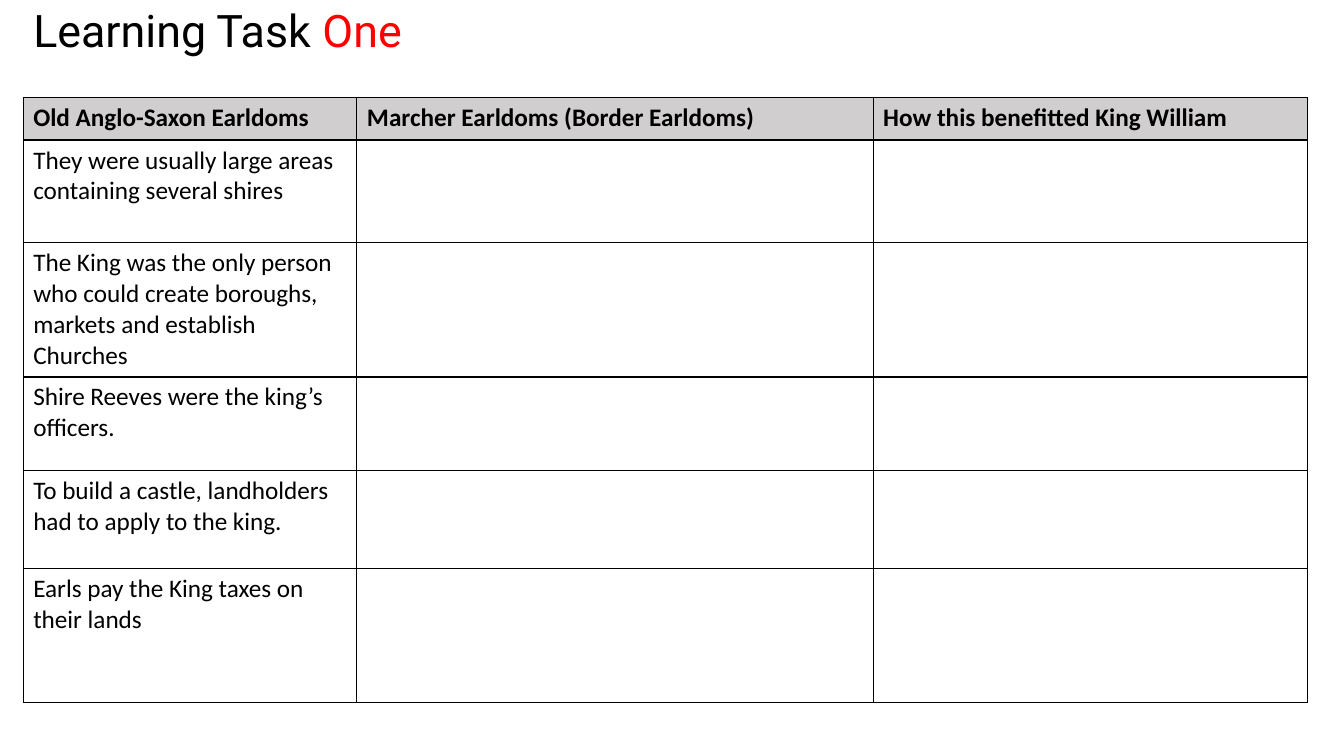
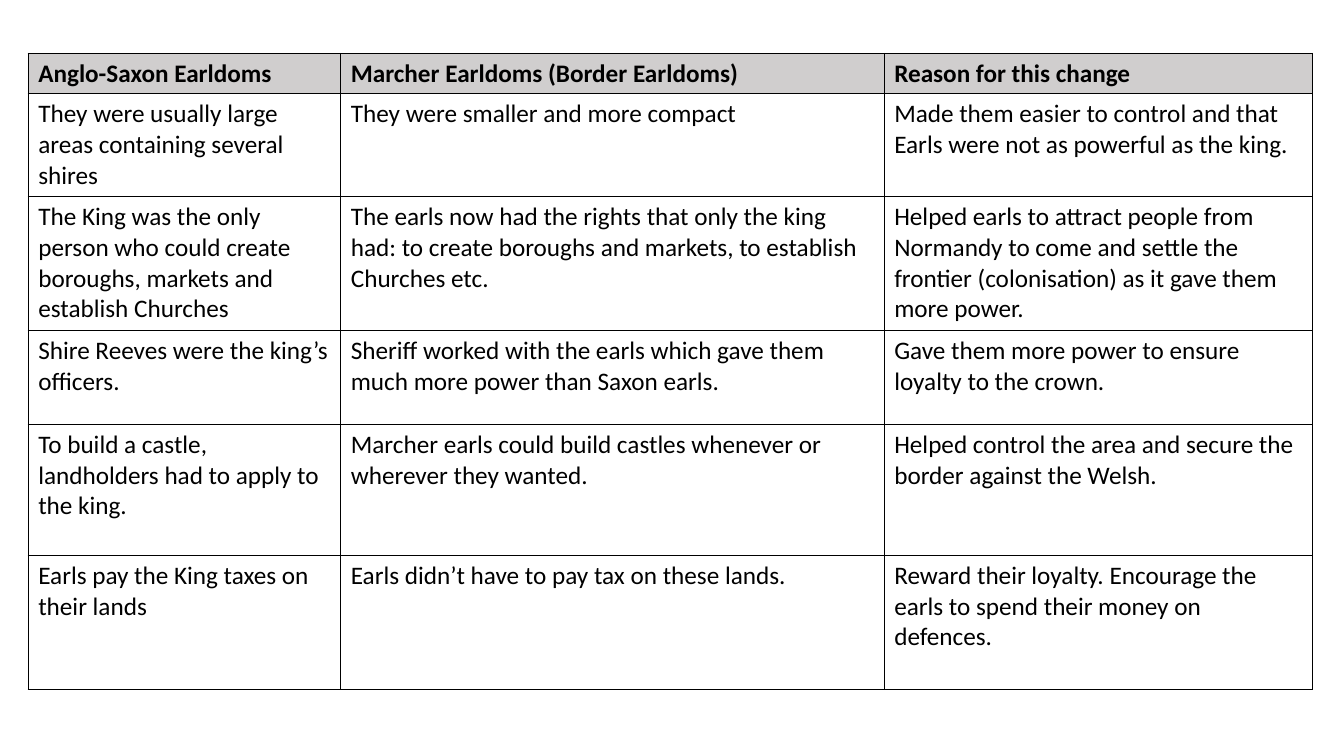
import lxml.etree
import pptx
import pptx.dml.color
import pptx.enum.text
import pptx.oxml.ns
import pptx.util

Inches = pptx.util.Inches
Pt = pptx.util.Pt
RGBColor = pptx.dml.color.RGBColor
qn = pptx.oxml.ns.qn

BLACK = RGBColor(0x00, 0x00, 0x00)
RED = RGBColor(0xFF, 0x00, 0x00)
HEADER_GREY = RGBColor(0xD0, 0xCE, 0xCE)
TITLE_FONT, TABLE_FONT = "Roboto", "Calibri"
TITLE_ONLY_LAYOUT, BLANK_LAYOUT = 5, 6

# Content: old rules, Marcher rules, reasons for the change
TITLE_RUNS = [("Learning Task ", BLACK), ("One", RED)]
COMPARISONS = [
    ("They were usually large areas containing several shires",
     "They were smaller and more compact",
     "Made them easier to control and that Earls were not as powerful as the king."),
    ("The King was the only person who could create boroughs, markets and establish Churches",
     "The earls now had the rights that only the king had: to create boroughs and markets, "
     "to establish Churches etc.",
     "Helped earls to attract people from Normandy to come and settle the frontier "
     "(colonisation) as it gave them more power."),
    ("Shire Reeves were the king’s officers.",
     "Sheriff worked with the earls which gave them much more power than Saxon earls.",
     "Gave them more power to ensure loyalty to the crown."),
    ("To build a castle, landholders had to apply to the king.",
     "Marcher earls could build castles whenever or wherever they wanted.",
     "Helped control the area and secure the border against the Welsh."),
    ("Earls pay the King taxes on their lands",
     "Earls didn’t have to pay tax on these lands.",
     "Reward their loyalty. Encourage the earls to spend their money on defences."),
]
MARCHER_HEADING = "Marcher Earldoms (Border Earldoms)"
TASK_TABLE = {
    "position": (0.23, 0.97),
    "columns": (3.31, 5.12, 4.31),
    "heights": (0.42, 1.02, 1.33, 0.93, 0.97, 1.33),
    "rows": [("Old Anglo-Saxon Earldoms", MARCHER_HEADING, "How this benefitted King William")]
            + [(old_rule, "", "") for old_rule, _, _ in COMPARISONS],
}
ANSWER_TABLE = {
    "position": (0.28, 0.53),
    "columns": (3.1, 5.39, 4.25),
    "heights": (0.4, 1.02, 1.33, 0.93, 1.3, 1.33),
    "rows": [("Anglo-Saxon Earldoms", MARCHER_HEADING, "Reason for this change")] + COMPARISONS,
}


def add_borders(cell):
    properties = cell._tc.get_or_add_tcPr()
    for side in ("a:lnL", "a:lnR", "a:lnT", "a:lnB"):
        line = lxml.etree.SubElement(properties, qn(side), w=str(Pt(1)))
        fill = lxml.etree.SubElement(line, qn("a:solidFill"))
        lxml.etree.SubElement(fill, qn("a:srgbClr"), val=str(BLACK))


def style_cell(cell, text, is_header):
    add_borders(cell)
    if is_header:
        cell.fill.solid()
        cell.fill.fore_color.rgb = HEADER_GREY
    else:
        cell.fill.background()
    cell.text = text
    font = cell.text_frame.paragraphs[0].font
    font.name, font.size, font.bold = TABLE_FONT, Pt(18), is_header
    font.color.rgb = BLACK


def add_earldom_table(slide, content):
    rows, columns, heights = content["rows"], content["columns"], content["heights"]
    left, top = content["position"]
    table = slide.shapes.add_table(
        len(rows), len(columns), Inches(left), Inches(top),
        Inches(sum(columns)), Inches(sum(heights))).table
    table.first_row = table.horz_banding = False
    for column, width in zip(table.columns, columns):
        column.width = Inches(width)
    for row_index, (row, height) in enumerate(zip(table.rows, heights)):
        row.height = Inches(height)
        for cell, text in zip(row.cells, rows[row_index]):
            style_cell(cell, text, row_index == 0)


def set_title(slide):
    title = slide.shapes.title
    title.left, title.top = Inches(0.23), Inches(-0.02)
    title.width, title.height = Inches(6.35), Inches(0.64)
    frame = title.text_frame
    frame.word_wrap = True
    frame.auto_size = pptx.enum.text.MSO_AUTO_SIZE.SHAPE_TO_FIT_TEXT
    frame.vertical_anchor = pptx.enum.text.MSO_ANCHOR.TOP
    paragraph = frame.paragraphs[0]
    paragraph.alignment = pptx.enum.text.PP_ALIGN.LEFT
    paragraph.font.name, paragraph.font.size = TITLE_FONT, Pt(32)
    for text, color in TITLE_RUNS:
        run = paragraph.add_run()
        run.text = text
        run.font.color.rgb = color


def main():
    presentation = pptx.Presentation()
    presentation.slide_width, presentation.slide_height = Inches(13.33), Inches(7.5)
    layouts = presentation.slide_layouts

    # Task with blank columns to complete
    task_slide = presentation.slides.add_slide(layouts[TITLE_ONLY_LAYOUT])
    set_title(task_slide)
    add_earldom_table(task_slide, TASK_TABLE)

    # Completed answers
    answer_slide = presentation.slides.add_slide(layouts[BLANK_LAYOUT])
    add_earldom_table(answer_slide, ANSWER_TABLE)

    presentation.save("out.pptx")


if __name__ == "__main__":
    main()
